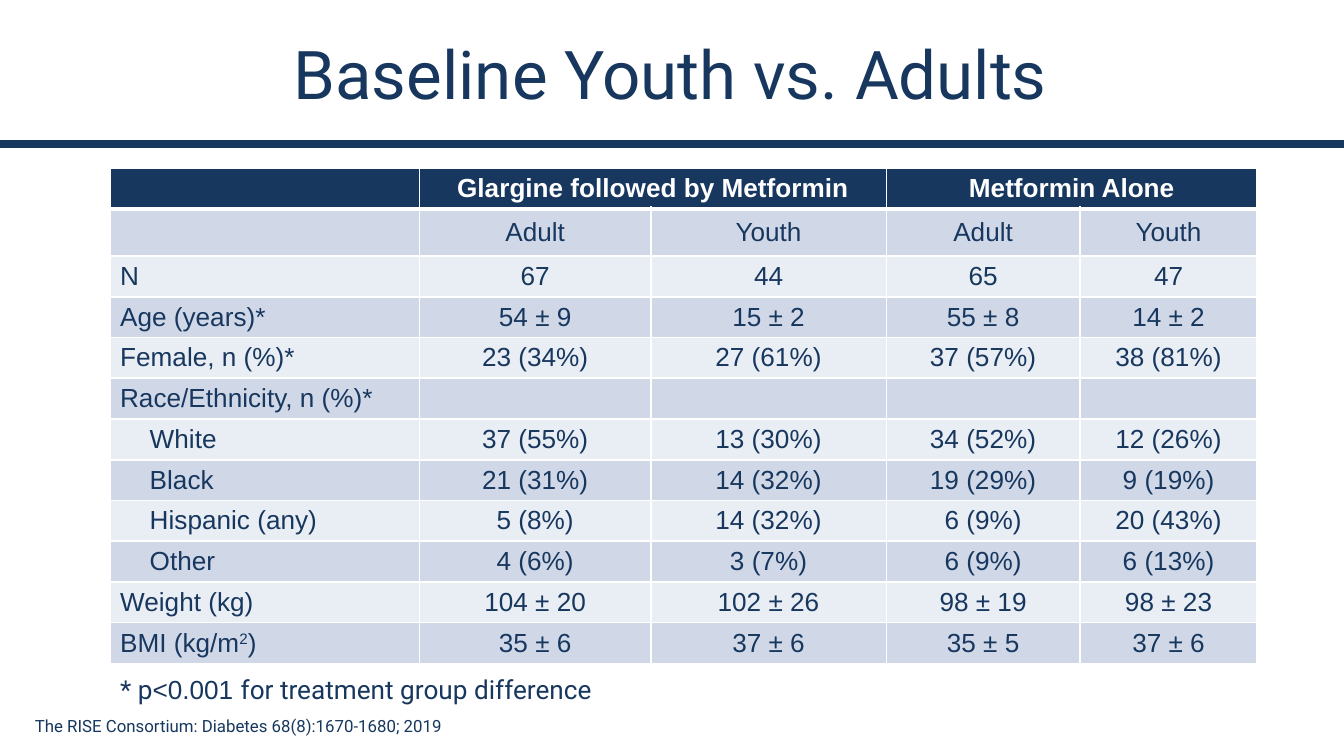
import pptx
import pptx.util
import pptx.dml.color
import pptx.enum.shapes
import pptx.enum.text
import pptx.oxml
import pptx.oxml.ns
from pptx.util import Cm

NAVY = pptx.dml.color.RGBColor(0x17, 0x37, 0x5E)
WHITE = pptx.dml.color.RGBColor(0xFF, 0xFF, 0xFF)
BAND_DARK = pptx.dml.color.RGBColor(0xD0, 0xD8, 0xE8)
BAND_LIGHT = pptx.dml.color.RGBColor(0xE9, 0xED, 0xF4)
CENTER = pptx.enum.text.PP_ALIGN.CENTER
MIDDLE = pptx.enum.text.MSO_ANCHOR.MIDDLE


def style_font(font, name, size, color, bold=False):
    font.name = name
    font.size = pptx.util.Pt(size)
    font.color.rgb = color
    font.bold = bold


def add_border(cell, side, points):
    cell._tc.get_or_add_tcPr().append(pptx.oxml.parse_xml(
        f'<a:ln{side} {pptx.oxml.ns.nsdecls("a")} w="{pptx.util.Pt(points)}">'
        f'<a:solidFill><a:srgbClr val="{WHITE}"/></a:solidFill></a:ln{side}>'))


presentation = pptx.Presentation()
presentation.slide_width = Cm(25.4)
presentation.slide_height = Cm(14.29)
slide = presentation.slides.add_slide(presentation.slide_layouts[6])

# Rule below the title
rule = slide.shapes.add_connector(
    pptx.enum.shapes.MSO_CONNECTOR.STRAIGHT, 0, Cm(2.72), Cm(25.4), Cm(2.72))
rule.line.color.rgb = NAVY
rule.line.width = pptx.util.Pt(4.5)
rule._element.spPr.append(
    pptx.oxml.parse_xml(f'<a:effectLst {pptx.oxml.ns.nsdecls("a")}/>'))

# Title
title = slide.shapes.add_textbox(Cm(1.24), Cm(0.43), Cm(22.86), Cm(1.88))
title.text_frame.word_wrap = True
title.text_frame.vertical_anchor = MIDDLE
paragraph = title.text_frame.paragraphs[0]
paragraph.text = "Baseline Youth vs. Adults"
paragraph.alignment = CENTER
style_font(paragraph.font, "Roboto", 36, NAVY)

# Baseline table
rows = [
    ["", "Glargine followed by Metformin", "", "Metformin Alone", ""],
    ["", "Adult", "Youth", "Adult", "Youth"],
    ["N", "67", "44", "65", "47"],
    ["Age (years)*", "54 ± 9", "15 ± 2", "55 ± 8", "14 ± 2"],
    ["Female, n (%)*", "23 (34%)", "27 (61%)", "37 (57%)", "38 (81%)"],
    ["Race/Ethnicity, n (%)*", "", "", "", ""],
    ["White", "37 (55%)", "13 (30%)", "34 (52%)", "12 (26%)"],
    ["Black", "21 (31%)", "14 (32%)", "19 (29%)", "9 (19%)"],
    ["Hispanic (any)", "5 (8%)", "14 (32%)", "6 (9%)", "20 (43%)"],
    ["Other", "4 (6%)", "3 (7%)", "6 (9%)", "6 (13%)"],
    ["Weight (kg)", "104 ± 20", "102 ± 26", "98 ± 19", "98 ± 23"],
    ["BMI (kg/m", "35 ± 6", "37 ± 6", "35 ± 5", "37 ± 6"],
]
subgroups = {"White", "Black", "Hispanic (any)", "Other"}
column_widths = [5.84, 4.37, 4.45, 3.66, 3.35]
row_heights = [0.77, 0.89] + [0.77] * 10

table = slide.shapes.add_table(
    len(rows), len(column_widths), Cm(2.09), Cm(3.18),
    Cm(sum(column_widths)), Cm(sum(row_heights))).table
for column, width in zip(table.columns, column_widths):
    column.width = Cm(width)
for row, height in zip(table.rows, row_heights):
    row.height = Cm(height)

for row_index, values in enumerate(rows):
    header = row_index == 0
    for column_index, value in enumerate(values):
        cell = table.cell(row_index, column_index)
        label = column_index == 0
        indent = 0.74 if value in subgroups else 0.18
        cell.margin_left = Cm(indent if label else 0.05)
        cell.margin_right = Cm(0.05)
        cell.margin_top = cell.margin_bottom = 0
        cell.vertical_anchor = MIDDLE
        for side in "LR":
            add_border(cell, side, 1)
        add_border(cell, "T", 3 if row_index == 1 else 1)
        add_border(cell, "B", 3 if header else 1)
        cell.fill.solid()
        cell.fill.fore_color.rgb = (
            NAVY if header else BAND_DARK if row_index % 2 else BAND_LIGHT)
        paragraph = cell.text_frame.paragraphs[0]
        paragraph.text = value
        if not label:
            paragraph.alignment = CENTER
        style_font(paragraph.font, "Arial", 14, WHITE if header else NAVY, header)

# Column group headings
for first_column in (1, 3):
    table.cell(0, first_column).merge(table.cell(0, first_column + 1))

# Squared unit in the last label
paragraph = table.cell(len(rows) - 1, 0).text_frame.paragraphs[0]
superscript = paragraph.add_run()
superscript.text = "2"
superscript._r.get_or_add_rPr().set("baseline", "30000")
paragraph.add_run().text = ")"

# Citation
citation = slide.shapes.add_textbox(Cm(0.41), Cm(13.41), Cm(8.43), Cm(0.64))
citation.text_frame.word_wrap = False
paragraph = citation.text_frame.paragraphs[0]
paragraph.text = "The RISE Consortium: Diabetes 68(8):1670-1680; 2019"
style_font(paragraph.font, "Roboto", 9, NAVY)

# Significance note
note = slide.shapes.add_textbox(Cm(2.09), Cm(12.62), Cm(12.5), Cm(0.79))
frame = note.text_frame
frame.word_wrap = True
frame.margin_left = frame.margin_right = Cm(0.18)
frame.margin_top = frame.margin_bottom = Cm(0.1)
paragraph = frame.paragraphs[0]
for text, font_name in [("* p", "Roboto"), ("<0.001 ", "Arial"),
                        ("for treatment group difference", "Roboto")]:
    run = paragraph.add_run()
    run.text = text
    style_font(run.font, font_name, 14, NAVY)

presentation.save("out.pptx")
